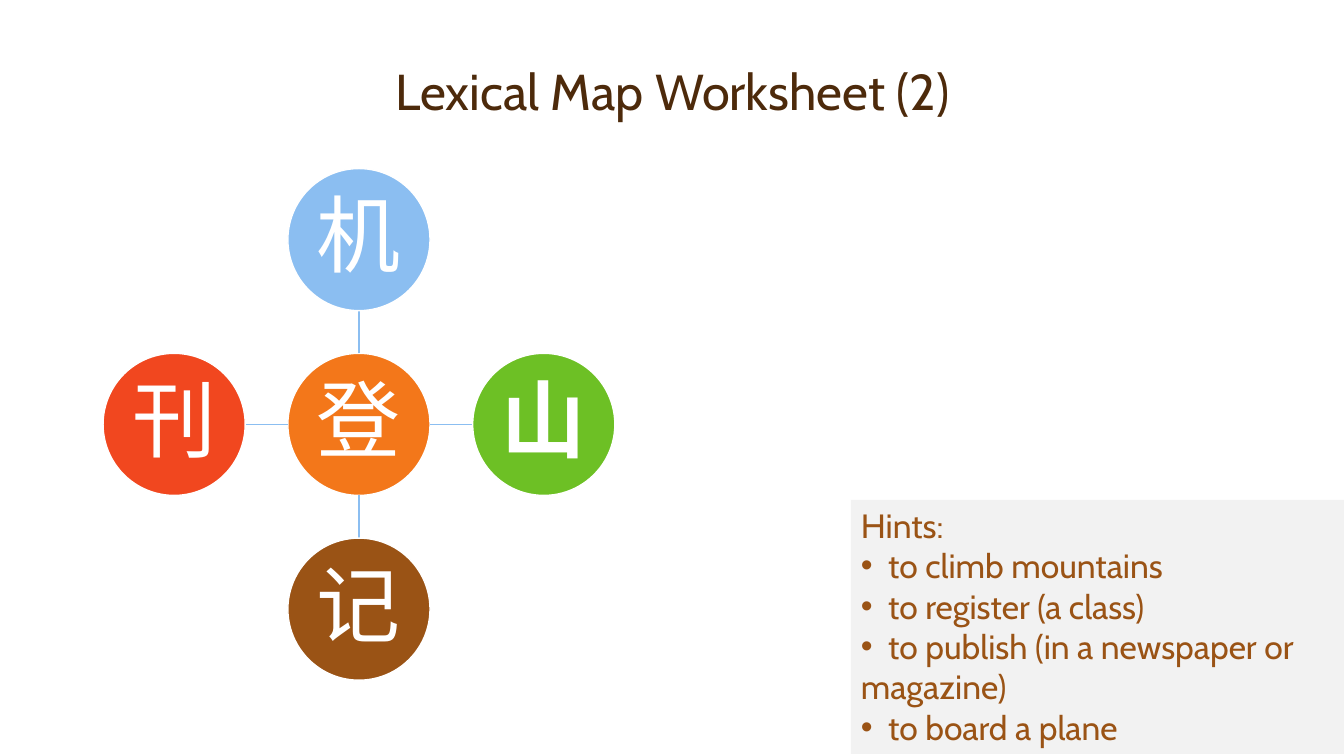
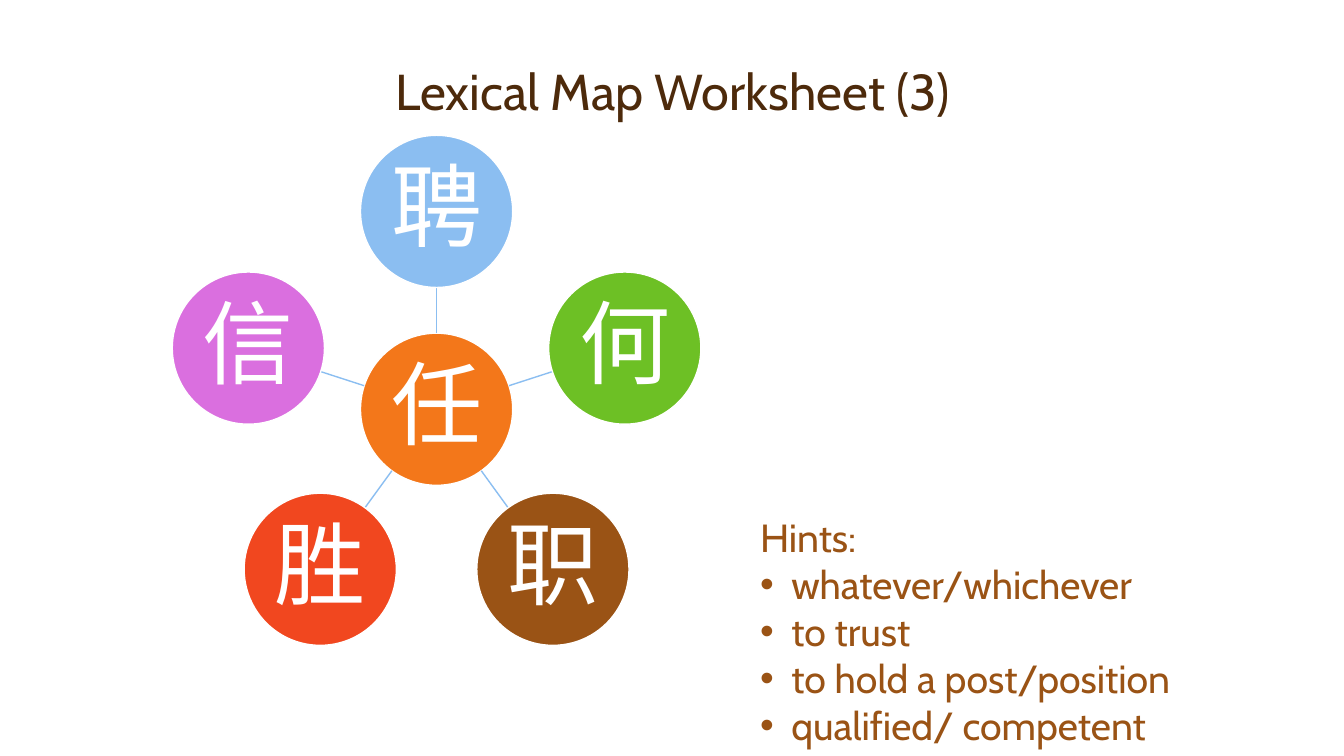
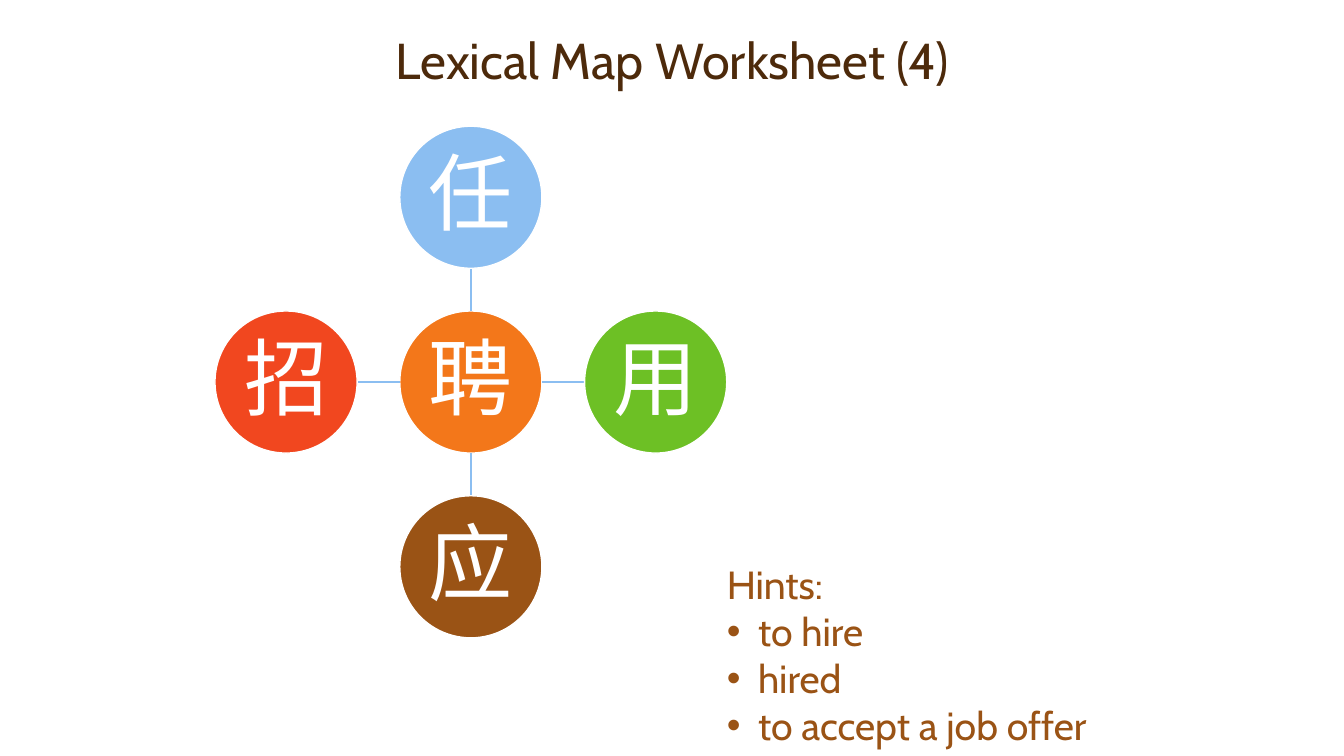
import math

import pptx
import pptx.dml.color
import pptx.enum.shapes
import pptx.enum.text
import pptx.oxml
import pptx.oxml.ns
import pptx.util
from pptx.util import Inches

ANCHOR = pptx.enum.text.MSO_ANCHOR
ALIGN = pptx.enum.text.PP_ALIGN
AUTO_SIZE = pptx.enum.text.MSO_AUTO_SIZE
SHAPE = pptx.enum.shapes.MSO_SHAPE


class Theme:
    font = "Cabin"
    white = "FFFFFF"
    title = "4D2A0B"
    hint = "9A5315"
    panel = "F2F2F2"
    spoke = "8BBEF1"
    hub = "F3771A"
    satellites = ("8BBEF1", "6DC025", "9A5315", "F1471F", "DA6FDF")
    title_size = 36
    line_width = 1
    orbit_ratio = 1.3  # distance between circle centres, in diameters


def rgb(color):
    return pptx.dml.color.RGBColor.from_string(color)


def add_element(parent, tag, **attributes):
    """Append a drawing element to its parent."""
    element = parent.makeelement(pptx.oxml.ns.qn(tag), attributes)
    parent.append(element)
    return element


class Worksheet:
    """Holds the presentation, its theme and the current slide."""

    def __init__(self, theme):
        self.theme = theme
        self.presentation = pptx.Presentation()
        self.presentation.slide_width = Inches(13.33)
        self.presentation.slide_height = Inches(7.5)
        self.slide = None

    def new_slide(self):
        layout = self.presentation.slide_layouts[6]
        self.slide = self.presentation.slides.add_slide(layout)

    def format_frame(self, frame, **values):
        for name, value in {"word_wrap": True, **values}.items():
            setattr(frame, name, value)

    def add_text(self, paragraph, text, size, color, bold=False):
        run = paragraph.add_run()
        run.text = text
        values = {"name": self.theme.font, "size": pptx.util.Pt(size), "bold": bold}
        for name, value in values.items():
            setattr(run.font, name, value)
        run.font.color.rgb = rgb(color)

    def title(self, text, anchor=ANCHOR.BOTTOM):
        box = self.slide.shapes.add_textbox(
            Inches(0.67), Inches(0), Inches(12), Inches(1.25))
        self.format_frame(box.text_frame, vertical_anchor=anchor)
        paragraph = box.text_frame.paragraphs[0]
        paragraph.alignment = ALIGN.CENTER
        paragraph.line_spacing = 0.9
        self.add_text(paragraph, text, self.theme.title_size, self.theme.title)

    def circle(self, x, y, diameter, text, size, color, bold=False):
        shape = self.slide.shapes.add_shape(
            SHAPE.OVAL, Inches(x - diameter / 2), Inches(y - diameter / 2),
            Inches(diameter), Inches(diameter))
        shape.shadow.inherit = False
        shape.fill.solid()
        shape.fill.fore_color.rgb = rgb(color)
        shape.line.color.rgb = rgb(self.theme.white)
        shape.line.width = pptx.util.Pt(self.theme.line_width)
        margins = dict.fromkeys(
            ("margin_left", "margin_top", "margin_right", "margin_bottom"),
            Inches(0.04))
        self.format_frame(
            shape.text_frame, vertical_anchor=ANCHOR.MIDDLE, **margins)
        paragraph = shape.text_frame.paragraphs[0]
        paragraph.alignment = ALIGN.CENTER
        paragraph.line_spacing = 0.9
        self.add_text(paragraph, text, size, self.theme.white, bold)

    def spoke(self, start, end):
        connector = self.slide.shapes.add_connector(
            pptx.enum.shapes.MSO_CONNECTOR.STRAIGHT,
            *(Inches(value) for value in (*start, *end)))
        connector.line.color.rgb = rgb(self.theme.spoke)
        connector.line.width = pptx.util.Pt(self.theme.line_width)
        add_element(connector._element.spPr, "a:effectLst")

    def lexical_map(self, center, diameter, size, hub, satellites, bold=""):
        """Place the satellites clockwise from the top around the hub."""
        def at(distance, angle):
            return (center[0] + distance * math.sin(angle),
                    center[1] - distance * math.cos(angle))

        orbit = diameter * self.theme.orbit_ratio
        self.circle(*center, diameter, hub, size, self.theme.hub)
        for index, character in enumerate(satellites):
            angle = 2 * math.pi * index / len(satellites)
            self.spoke(at(diameter / 2, angle), at(orbit - diameter / 2, angle))
            self.circle(*at(orbit, angle), diameter, character, size,
                        self.theme.satellites[index], character in bold)

    def hints(self, box, size, hints, gap, fill=None):
        shape = self.slide.shapes.add_textbox(*(Inches(value) for value in box))
        if fill:
            shape.fill.solid()
            shape.fill.fore_color.rgb = rgb(fill)
        frame = shape.text_frame
        self.format_frame(frame, auto_size=AUTO_SIZE.SHAPE_TO_FIT_TEXT)
        self.add_text(frame.paragraphs[0], "Hints:", size, self.theme.hint)
        for hint in hints:
            paragraph = frame.add_paragraph()
            # The tab sets the gap after the bullet; wrapped lines start at the margin
            properties = paragraph._p.get_or_add_pPr()
            properties.set("marL", "0")
            properties.set("indent", "0")
            add_element(properties, "a:buFont", typeface="Arial")
            add_element(properties, "a:buChar", char="•")
            tabs = add_element(properties, "a:tabLst")
            add_element(tabs, "a:tab", pos=str(Inches(gap)), algn="l")
            self.add_text(paragraph, "\t" + hint, size, self.theme.hint)


def main():
    worksheet = Worksheet(Theme)

    # Words with 登
    worksheet.new_slide()
    worksheet.lexical_map((3.56, 4.21), 1.41, 60, "登", "机山记刊", bold="山")
    worksheet.hints(
        (8.44, 4.96, 4.89, 2.52), 24,
        ("to climb mountains", "to register (a class)",
         "to publish (in a newspaper or magazine)", "to board a plane"),
        gap=0.27, fill=Theme.panel)
    worksheet.title("Lexical Map Worksheet (2)")

    # Words with 任
    worksheet.new_slide()
    worksheet.lexical_map((4.33, 4.06), 1.51, 65, "任", "聘何职胜信")
    worksheet.hints(
        (7.44, 5.04, 5.89, 2.46), 28,
        ("whatever/whichever", "to trust", "to hold a post/position",
         "qualified/ competent"), gap=0.31)
    worksheet.title("Lexical Map Worksheet (3)")

    # Words with 聘
    worksheet.new_slide()
    worksheet.lexical_map((4.67, 3.79), 1.41, 60, "聘", "任用应招")
    worksheet.hints(
        (7.11, 5.51, 6.22, 1.99), 28,
        ("to hire", "hired", "to accept a job offer"), gap=0.31)
    worksheet.title("Lexical Map Worksheet (4)", ANCHOR.MIDDLE)

    worksheet.presentation.save("out.pptx")


if __name__ == "__main__":
    main()
